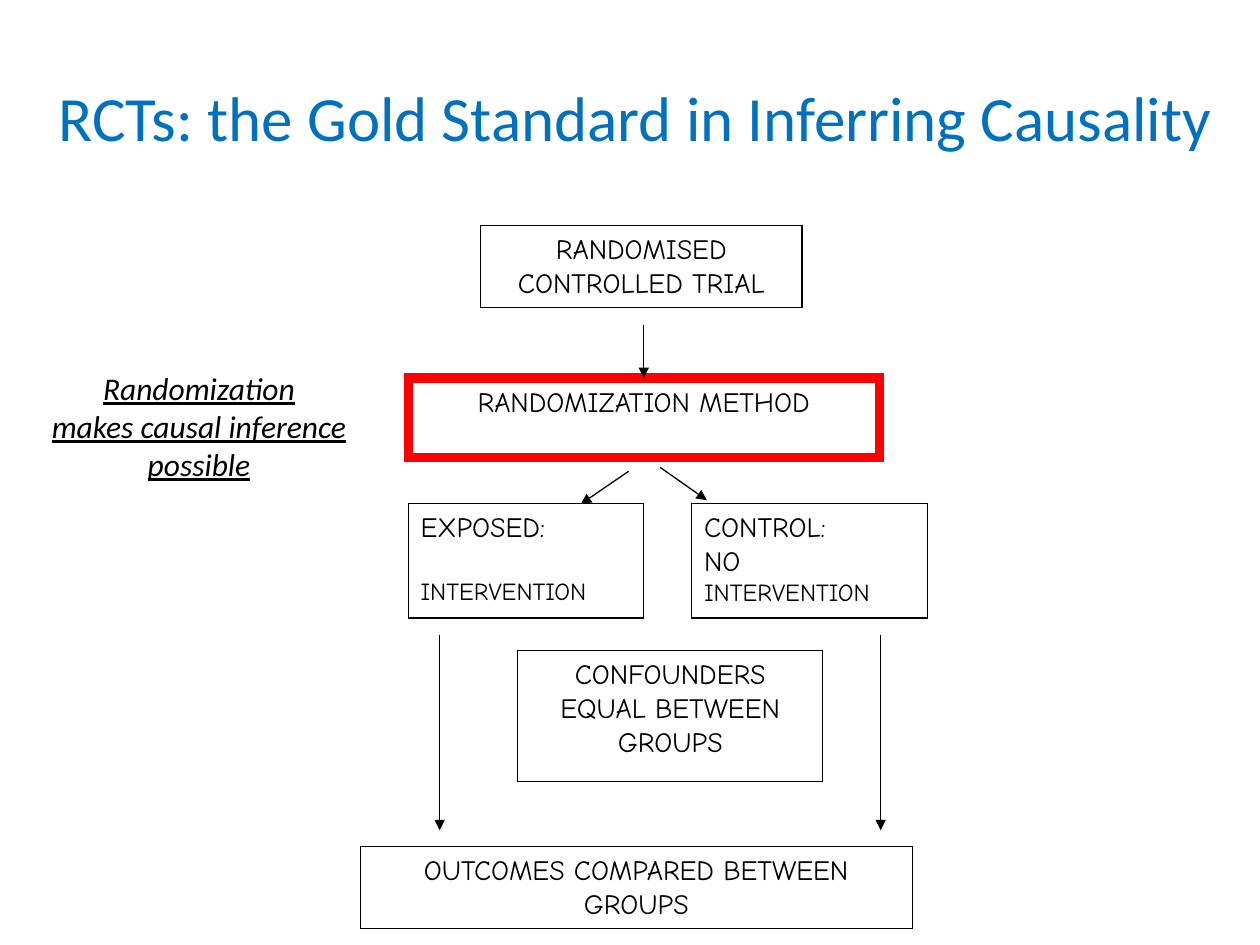
from dataclasses import dataclass
from typing import Optional

from lxml import etree
from pptx import Presentation
from pptx.dml.color import RGBColor
from pptx.enum.shapes import MSO_CONNECTOR, MSO_SHAPE
from pptx.enum.text import MSO_ANCHOR, MSO_AUTO_SIZE, PP_ALIGN
from pptx.oxml.ns import qn
from pptx.util import Inches, Pt

LEFT, CENTER = PP_ALIGN.LEFT, PP_ALIGN.CENTER
TOP, MIDDLE = MSO_ANCHOR.TOP, MSO_ANCHOR.MIDDLE
RECTANGLE = MSO_SHAPE.RECTANGLE
STRAIGHT = MSO_CONNECTOR.STRAIGHT
FIT_SHAPE, NO_FIT = MSO_AUTO_SIZE.SHAPE_TO_FIT_TEXT, MSO_AUTO_SIZE.NONE
TITLE_ONLY = 5
TOP_SIDE = 0
COLUMNS = 100

BLACK, WHITE, RED, BLUE = "000000", "FFFFFF", "FF0000", "0070C0"
BODY_FONT, BOX_FONT = "Calibri", "Comic Neue"

presentation = Presentation()
presentation.slide_width = Inches(10)
presentation.slide_height = Inches(7.5)
CELL = presentation.slide_width / COLUMNS


@dataclass(frozen=True)
class Run:
    text: str
    size: float = 16


@dataclass(frozen=True)
class Line:
    runs: tuple[Run, ...]
    space_before: float = 0


@dataclass(frozen=True)
class Box:
    key: str
    column: float
    row: float
    columns: float
    rows: float
    lines: tuple[Line, ...]
    align: PP_ALIGN = CENTER
    outline: str = BLACK
    outline_width: float = 0.75


@dataclass(frozen=True)
class Arrow:
    start: tuple[float, float]
    end: tuple[float, float]
    target: Optional[str] = None


def grid(*cells: float) -> list[int]:
    return [round(cell * CELL) for cell in cells]


def color(value: str) -> RGBColor:
    return RGBColor.from_string(value)


def line(text: str, size: float = 16, space_before: float = 0) -> Line:
    return Line((Run(text, size),), space_before)


def write(text_frame, lines, *, font=BOX_FONT, fill=BLACK, align=CENTER, anchor=TOP,
          wrap=True, fit=NO_FIT, italic=None, underline=None) -> None:
    text_frame.word_wrap = wrap
    text_frame.auto_size = fit
    text_frame.vertical_anchor = anchor
    for index, content in enumerate(lines):
        paragraph = text_frame.add_paragraph() if index else text_frame.paragraphs[0]
        paragraph.alignment = align
        paragraph.space_before = Pt(content.space_before)
        for item in content.runs:
            run = paragraph.add_run()
            run.text = item.text
            run.font.name = font
            run.font.size = Pt(item.size)
            run.font.color.rgb = color(fill)
            run.font.italic = italic
            run.font.underline = underline


def draw_box(slide, box: Box):
    shape = slide.shapes.add_shape(
        RECTANGLE, *grid(box.column, box.row, box.columns, box.rows))
    shape.shadow.inherit = False
    shape.fill.solid()
    shape.fill.fore_color.rgb = color(WHITE)
    shape.line.color.rgb = color(box.outline)
    shape.line.width = Pt(box.outline_width)
    etree.SubElement(shape.line._get_or_add_ln(), qn("a:miter"), lim="800000")
    write(shape.text_frame, box.lines, align=box.align)
    return shape


def draw_arrow(slide, arrow: Arrow, shapes: dict) -> None:
    connector = slide.shapes.add_connector(STRAIGHT, *grid(*arrow.start, *arrow.end))
    if arrow.target:
        connector.end_connect(shapes[arrow.target], TOP_SIDE)
    connector.line.color.rgb = color(BLACK)
    connector.line.width = Pt(0.75)
    etree.SubElement(connector.line._get_or_add_ln(), qn("a:tailEnd"), type="triangle")
    etree.SubElement(connector._element.spPr, qn("a:effectLst"))


BOXES = (
    Box("randomization", 32.4, 30, 37.4, 6.3, (line("RANDOMIZATION METHOD"),),
        outline=RED, outline_width=5.25),
    Box("trial", 38.15, 17.9, 25.5, 6.5, (line("RANDOMISED CONTROLLED TRIAL"),)),
    Box("confounders", 41.1, 51.65, 24.2, 10.4,
        (line("CONFOUNDERS EQUAL BETWEEN GROUPS"),)),
    Box("exposed", 32.4, 39.95, 18.7, 9.1,
        (line("EXPOSED:"), line("INTERVENTION", 14, space_before=19)), LEFT),
    Box("control", 54.9, 39.95, 18.7, 9.1,
        (line("CONTROL:"), Line((Run("NO "), Run("INTERVENTION", 14)))), LEFT),
    Box("outcomes", 28.6, 67.2, 43.8, 6.5, (line("OUTCOMES COMPARED BETWEEN GROUPS"),)),
)

ARROWS = (
    Arrow((51.1, 25.8), (51.1, 30), "randomization"),
    Arrow((49.9, 37.4), (46.1, 40)),
    Arrow((52.4, 37.1), (56.1, 39.7)),
    *(Arrow((column, 50.4), (column, 65.9)) for column in (34.9, 69.9)),
)

slide = presentation.slides.add_slide(presentation.slide_layouts[TITLE_ONLY])

title = slide.shapes.title
title.left, title.top, title.width, title.height = grid(2.75, 3, 95.3, 12.5)
write(title.text_frame, [line("RCTs: the Gold Standard in Inferring Causality", 36)],
      font=BODY_FONT, fill=BLUE, anchor=MIDDLE)

shapes = {box.key: draw_box(slide, box) for box in BOXES}
for arrow in ARROWS:
    draw_arrow(slide, arrow, shapes)

remark = slide.shapes.add_textbox(*grid(2.6, 28.8, 26.4, 10.1))
write(remark.text_frame,
      [line(text, 18) for text in ("Randomization", "makes causal inference", "possible")],
      font=BODY_FONT, wrap=False, fit=FIT_SHAPE, italic=True, underline=True)

presentation.save("out.pptx")
